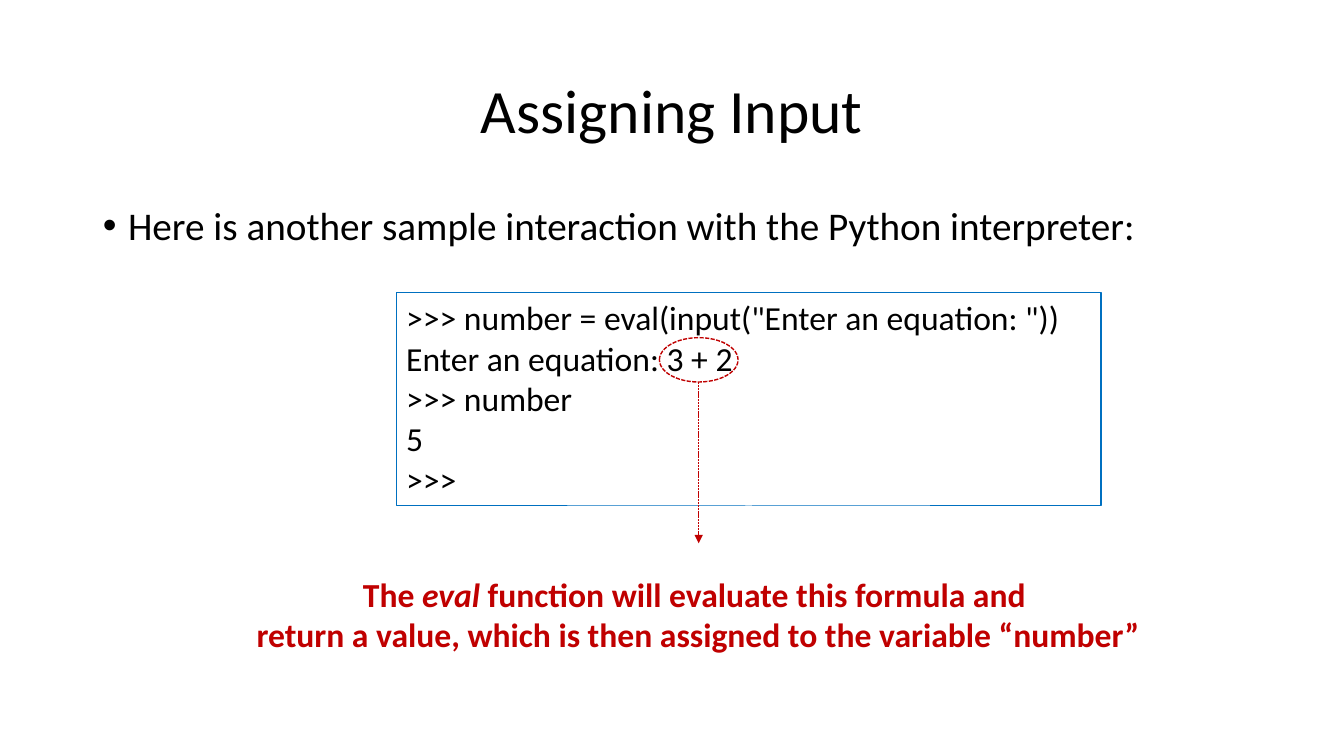
from dataclasses import dataclass
from pptx import Presentation, util as u
from pptx.dml.color import RGBColor
from pptx.enum import dml, shapes, text
from pptx.oxml.xmlchemy import OxmlElement

TITLE = "Assigning Input"
BULLET = "Here is another sample interaction with the Python interpreter:"
SESSION = [
    '>>> number = eval(input("Enter an equation: "))',
    "Enter an equation: 3 + 2",
    ">>> number",
    "5",
    ">>>\u00a0",
]
CAPTION = [
    [("The ", False), ("eval", True), (" function will evaluate this formula and ", False)],
    [("return a value, which is then assigned to the variable “number”", False)],
]

WIDTH, HEIGHT = 13.33, 7.5
MARGIN = 0.92
TITLE_BOX = (MARGIN, 0.4, WIDTH - 2 * MARGIN, 1.45)
BODY_BOX = (MARGIN, 2, 11.82, 5.14)
CODE_BOX = (3.93, 2.9, 6.99, 2.12)
CAPTION_BOX = (2.4, 5.64, 9.05, 0.91)
FORMULA_RING = (6.54, 3.35, 0.78, 0.44)
ARROW_LENGTH = 1.6


@dataclass(frozen=True)
class Theme:
    font: str = "Calibri"
    ink: RGBColor = RGBColor(0, 0, 0)
    frame: RGBColor = RGBColor(0x00, 0x70, 0xC0)
    accent: RGBColor = RGBColor(0xC0, 0, 0)
    title: int = 44
    body: int = 28
    code: int = 24


theme = Theme()


def inches(box):
    return [u.Inches(v) for v in box]


def place(sp, box):
    sp.left, sp.top, sp.width, sp.height = inches(box)


def style(p, size, color, bold=False):
    for r in p.runs:
        r.font.name = theme.font
        r.font.size = u.Pt(size)
        r.font.color.rgb = color
        r.font.bold = bold


def outline(line, color, width, dashed=False):
    line.color.rgb = color
    line.width = u.Pt(width)
    if dashed:
        line.dash_style = dml.MSO_LINE.SQUARE_DOT


def add_title(s):
    sp = s.shapes.title
    place(sp, TITLE_BOX)
    tf = sp.text_frame
    tf.text = TITLE
    tf.vertical_anchor = text.MSO_ANCHOR.MIDDLE
    p = tf.paragraphs[0]
    p.alignment = text.PP_ALIGN.CENTER
    p.line_spacing = 0.9
    style(p, theme.title, theme.ink)


def add_body(s):
    sp = s.placeholders[1]
    place(sp, BODY_BOX)
    sp.text_frame.text = BULLET
    p = sp.text_frame.paragraphs[0]
    p.line_spacing = 0.9
    p.space_before = u.Pt(10)
    pPr = p._p.get_or_add_pPr()
    pPr.set("marL", str(u.Inches(0.25)))
    pPr.set("indent", str(-u.Inches(0.25)))
    style(p, theme.body, theme.ink)


def add_session(s):
    sp = s.shapes.add_textbox(*inches(CODE_BOX))
    outline(sp.line, theme.frame, 0.75)
    tf = sp.text_frame
    tf.word_wrap = True
    tf.text = "\n".join(SESSION)
    for p in tf.paragraphs:
        style(p, theme.code, theme.ink)


def add_caption(s):
    tf = s.shapes.add_textbox(*inches(CAPTION_BOX)).text_frame
    tf.word_wrap = False
    p = tf.paragraphs[0]
    p.alignment = text.PP_ALIGN.CENTER
    for i, line in enumerate(CAPTION):
        if i:
            p.add_line_break()
        for words, italic in line:
            r = p.add_run()
            r.text = words
            r.font.italic = italic
    style(p, theme.code, theme.accent, bold=True)


def add_callout(s):
    ring = s.shapes.add_shape(shapes.MSO_SHAPE.OVAL, *inches(FORMULA_RING))
    ring.shadow.inherit = False
    ring.fill.background()
    outline(ring.line, theme.accent, 1, dashed=True)

    left, top, width, height = FORMULA_RING
    x, y = left + width / 2, top + height
    arrow = s.shapes.add_connector(
        shapes.MSO_CONNECTOR.STRAIGHT, *inches((x, y, x, y + ARROW_LENGTH)))
    outline(arrow.line, theme.accent, 0.5, dashed=True)
    tail = OxmlElement("a:tailEnd")
    tail.set("type", "triangle")
    arrow.line._get_or_add_ln().append(tail)
    arrow._element.spPr.append(OxmlElement("a:effectLst"))


def main():
    prs = Presentation()
    prs.slide_width, prs.slide_height = inches((WIDTH, HEIGHT))
    s = prs.slides.add_slide(prs.slide_layouts[1])
    for add in (add_body, add_title, add_session, add_caption, add_callout):
        add(s)
    prs.save("out.pptx")


if __name__ == "__main__":
    main()
